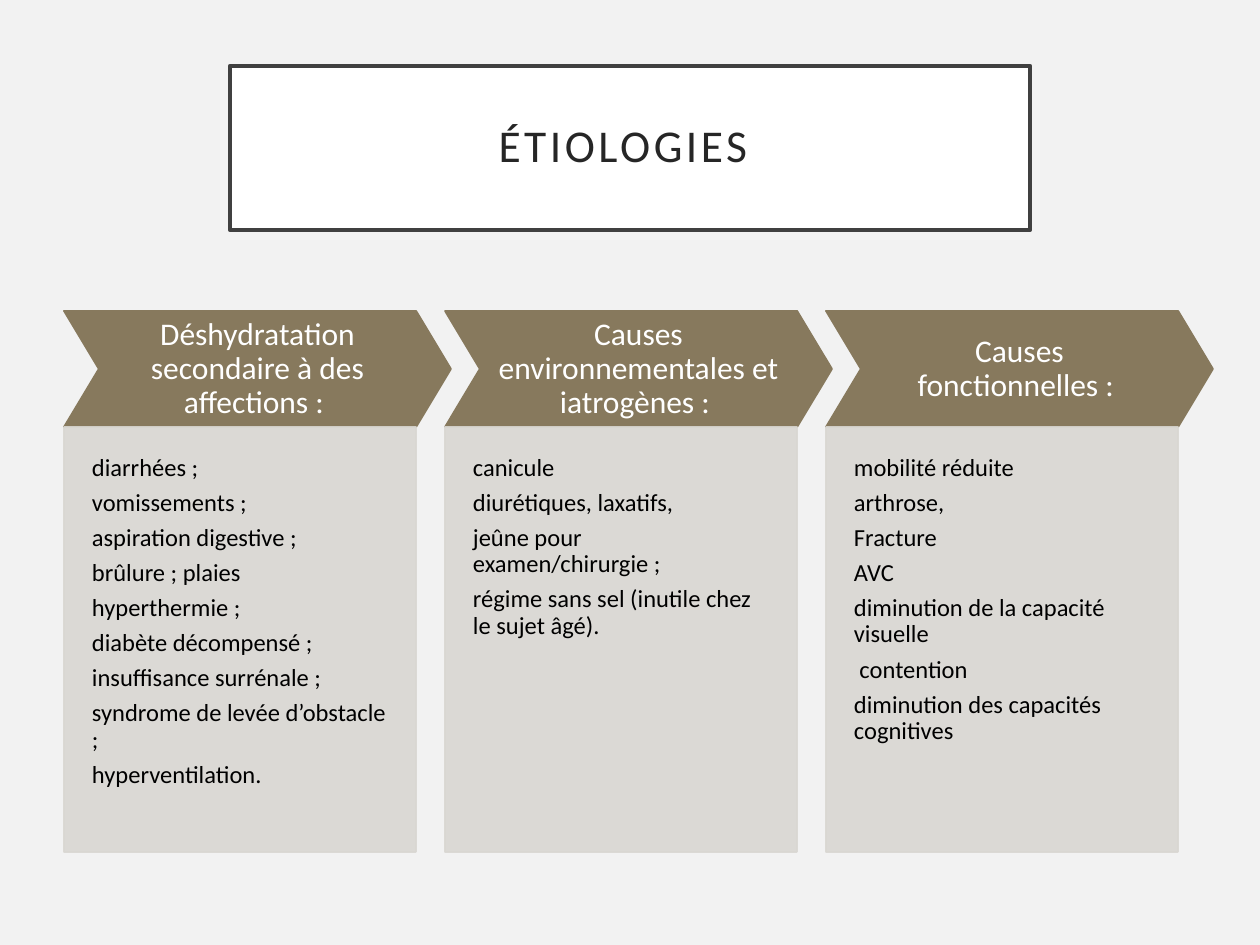
from lxml import etree
from pptx import Presentation
from pptx.dml.color import RGBColor
from pptx.enum.shapes import MSO_SHAPE
from pptx.enum.text import MSO_ANCHOR, MSO_AUTO_SIZE, PP_ALIGN
from pptx.oxml.ns import qn
from pptx.util import Pt

CHEVRON, RECTANGLE = MSO_SHAPE.CHEVRON, MSO_SHAPE.RECTANGLE
TOP, MIDDLE = MSO_ANCHOR.TOP, MSO_ANCHOR.MIDDLE
LEFT, CENTER = PP_ALIGN.LEFT, PP_ALIGN.CENTER

# Content
TITLE = "ÉTIOLOGIES "
CAUSES = [
    ("Déshydratation secondaire à des affections : ",
     ["diarrhées ;", "vomissements ;", "aspiration digestive ;",
      "brûlure ; plaies", "hyperthermie ;", "diabète décompensé ;",
      "insuffisance surrénale ;", "syndrome de levée d’obstacle ;",
      "hyperventilation."]),
    ("Causes environnementales et iatrogènes : ",
     ["canicule ", "diurétiques, laxatifs,", "jeûne pour examen/chirurgie ;",
      "régime sans sel (inutile chez le sujet âgé)."]),
    ("Causes fonctionnelles : ",
     ["mobilité réduite", "arthrose,", "Fracture", "AVC",
      "diminution de la capacité visuelle", " contention",
      "diminution des capacités cognitives"]),
]

THEME = {
    "font": "Calibri",
    "background": "F2F2F2", "title_fill": "FFFFFF", "title_line": "404040",
    "title_text": "262626", "header": "87795D", "header_text": "FFFFFF",
    "panel": "D9D7D2", "panel_text": "000000", "panel_alpha": 90,
    "title_size": 26, "header_size": 18, "panel_size": 14,
}

# Layout in px
PX = 914400 / 126
SLIDE_W, SLIDE_H = 1260, 945
TITLE_BOX = (230, 66, 800, 164)
COLUMN_LEFT, COLUMN_STEP = 64, 381
HEADER_TOP, HEADER_W, HEADER_H = 311, 387, 116
PANEL_W, PANEL_H = 352, 425


def px(length):
    return round(length * PX)


def color(name):
    return RGBColor.from_string(THEME[name])


def paint(shape, fill, line, width):
    shape.shadow.inherit = False
    shape.fill.solid()
    shape.fill.fore_color.rgb = color(fill)
    shape.line.color.rgb = color(line)
    shape.line.width = Pt(width)


def set_alpha(shape, percent):
    for node in shape._element.spPr.iter(qn("a:srgbClr")):
        etree.SubElement(node, qn("a:alpha")).set("val", str(percent * 1000))


def write(shape, lines, role, insets, align, anchor):
    frame = shape.text_frame
    frame.text = "\n".join(lines)
    frame.word_wrap = True
    frame.auto_size = MSO_AUTO_SIZE.NONE
    frame.vertical_anchor = anchor
    (frame.margin_left, frame.margin_top,
     frame.margin_right, frame.margin_bottom) = map(px, insets)
    size = THEME[role + "_size"]
    for para in frame.paragraphs:
        para.alignment = align
        para.line_spacing = 0.9
        para.space_before = Pt(0)
        para.space_after = Pt(size * 0.35)
        for span in para.runs:
            span.font.name = THEME["font"]
            span.font.size = Pt(size)
            span.font.color.rgb = color(role + "_text")


deck = Presentation()
deck.slide_width, deck.slide_height = px(SLIDE_W), px(SLIDE_H)
page = deck.slides.add_slide(deck.slide_layouts[5])
page.background.fill.solid()
page.background.fill.fore_color.rgb = color("background")

# Framed title with wide letter spacing
title = page.shapes.title
title.left, title.top, title.width, title.height = map(px, TITLE_BOX)
paint(title, "title_fill", "title_line", 2.5)
write(title, [TITLE], "title", (25, 25, 25, 25), CENTER, MIDDLE)
title.text_frame.paragraphs[0].runs[0].font._element.set("spc", "200")

# One chevron header and one panel per column
for index, (heading, items) in enumerate(CAUSES):
    left = px(COLUMN_LEFT + index * COLUMN_STEP)
    header = page.shapes.add_shape(
        CHEVRON, left, px(HEADER_TOP), px(HEADER_W), px(HEADER_H))
    header.adjustments[0] = 0.3
    paint(header, "header", "header", 1)
    write(header, [heading], "header", (14, 14, 14, 14), CENTER, MIDDLE)

    panel = page.shapes.add_shape(
        RECTANGLE, left, px(HEADER_TOP + HEADER_H), px(PANEL_W), px(PANEL_H))
    paint(panel, "panel", "panel", 1)
    set_alpha(panel, THEME["panel_alpha"])
    write(panel, items, "panel", (28, 28, 28, 56), LEFT, TOP)

deck.save("out.pptx")
